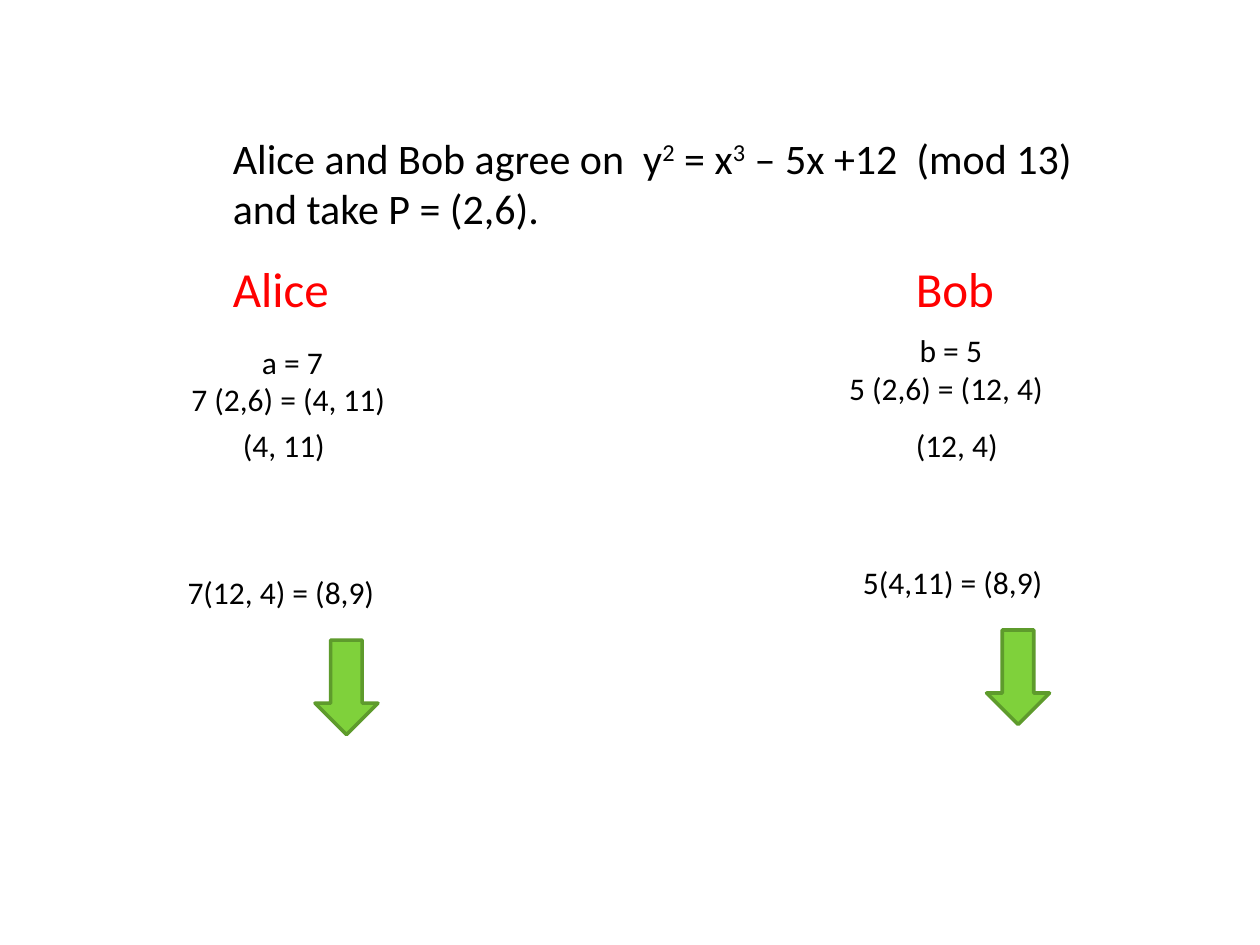
import pptx
import pptx.util
import pptx.dml.color
import pptx.enum.shapes
import pptx.enum.text
from pptx.util import Inches, Pt

COLORS = {"text": "000000", "name": "FF0000", "arrow": "7FD13B", "arrow_edge": "5E9B2C"}
FONT = "Calibri"
SUPERSCRIPT = "30000"

# Each text: left, top, width, height, size, colour, [(line, indent), ...]
# Left and top are offsets from the corner of the party's column.
ALICE = {
    "texts": [
        (0.67, 0, 0.97, 0.57, 28, "name", [("Alice", 0)]),
        (0, 0.67, 2.58, 0.71, 18, "text", [("a = 7", 0.9), ("7 (2,6) = (4, 11)", 0.34)]),
        (0.75, 1.33, 0.86, 0.4, 18, "text", [("(4, 11)", 0)]),
        (0.25, 2.5, 2.29, 0.4, 18, "text", [("7(12, 4) = (8,9)", 0.06)]),
    ],
    "arrow": (1.42, 3.08),
}
BOB = {
    "texts": [
        (0.5, 0, 1.01, 0.57, 28, "name", [("Bob", 0.09)]),
        (0, 0.58, 2.08, 0.71, 18, "text", [("b = 5", 0.62), ("5 (2,6) = (12, 4)", 0.06)]),
        (0.59, 1.33, 0.86, 0.4, 18, "text", [("(12, 4)", 0)]),
        (0.17, 2.42, 1.65, 0.4, 18, "text", [("5(4,11) = (8,9)", 0)]),
    ],
    "arrow": (1.25, 3),
}


def rgb(name):
    return pptx.dml.color.RGBColor.from_string(COLORS[name])


def add_text_box(page, left, top, width, height, wrap):
    box = page.shapes.add_textbox(Inches(left), Inches(top), Inches(width), Inches(height))
    box.text_frame.word_wrap = wrap
    box.text_frame.auto_size = pptx.enum.text.MSO_AUTO_SIZE.SHAPE_TO_FIT_TEXT
    return box.text_frame


def format_paragraph(para, size, color):
    para.font.name = FONT
    para.font.size = Pt(size)
    para.font.color.rgb = rgb(color)


def add_agreement(page, left, top, width, height):
    """Place the shared curve and base point, with raised exponents."""
    frame = add_text_box(page, left, top, width, height, False)
    curve, point = frame.paragraphs[0], frame.add_paragraph()
    pieces = ["Alice and Bob agree on  y", "2", " = x", "3", " – 5x +12  (mod 13)"]
    for piece in pieces:
        span = curve.add_run()
        span.text = piece
        if piece.isdigit():
            span.font._element.set("baseline", SUPERSCRIPT)
    point.text = "and take P = (2,6)."
    for para in frame.paragraphs:
        format_paragraph(para, 24, "text")


def add_arrow(page, left, top):
    arrow = page.shapes.add_shape(
        pptx.enum.shapes.MSO_SHAPE.DOWN_ARROW,
        Inches(left), Inches(top), Inches(0.5), Inches(0.75))
    arrow.shadow.inherit = False
    arrow.fill.solid()
    arrow.fill.fore_color.rgb = rgb("arrow")
    arrow.line.color.rgb = rgb("arrow_edge")
    arrow.line.width = Pt(2)


def add_party(page, left, top, party):
    """Place one party's name, calculations and arrow from the column corner."""
    for dx, dy, width, height, size, color, lines in party["texts"]:
        indented = any(indent for _, indent in lines)
        frame = add_text_box(page, left + dx, top + dy, width, height, indented)
        for index, (line, indent) in enumerate(lines):
            para = frame.add_paragraph() if index else frame.paragraphs[0]
            para.text = line
            format_paragraph(para, size, color)
            if indent:
                para._p.get_or_add_pPr().set("marL", str(Inches(indent)))
    dx, dy = party["arrow"]
    add_arrow(page, left + dx, top + dy)


def main():
    deck = pptx.Presentation()
    deck.slide_width, deck.slide_height = Inches(10), Inches(7.5)
    page = deck.slides.add_slide(deck.slide_layouts[6])
    add_agreement(page, 1.75, 1, 7.02, 0.91)
    add_party(page, 1.08, 2, ALICE)
    add_party(page, 6.58, 2, BOB)
    deck.save("out.pptx")


if __name__ == "__main__":
    main()
